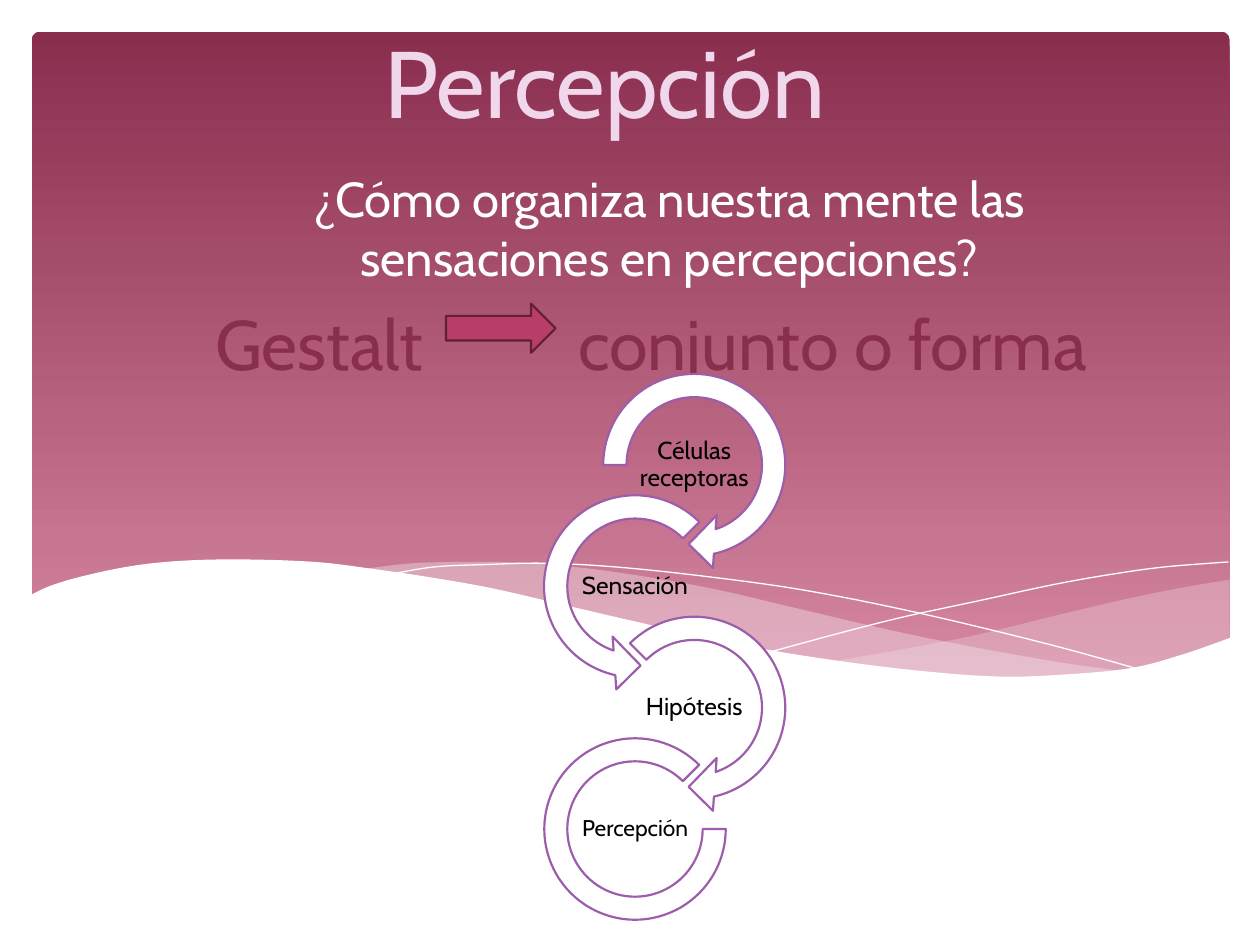
from lxml.etree import SubElement
from pptx import Presentation
from pptx.dml.color import RGBColor
from pptx.enum.shapes import MSO_SHAPE as Shape
from pptx.enum.text import MSO_ANCHOR as Anchor, PP_ALIGN as Align
from pptx.oxml.ns import qn
from pptx.util import Inches, Pt

FONT = "Cabin"
COLORS = {
    "wine": "8A2E4E", "rose": "D788A3", "mist": "F4E7ED", "white": "FFFFFF",
    "black": "000000", "lilac": "F1D7EC", "arrow": "B83D68",
    "arrow_edge": "602036", "purple": "9C5DAA",
}

TITLE = "Percepción"
QUESTION = "¿Cómo organiza nuestra mente las sensaciones en percepciones?"
GESTALT = "Gestalt\tconjunto o forma"

# Label, text size, preset, diameter, adjustments
STEPS = [
    ("Células receptoras", 14, Shape.CIRCULAR_ARROW, 1.68, (0.11, 11.42, 45, 108, 0.125)),
    ("Sensación", 14, Shape.LEFT_CIRCULAR_ARROW, 1.68, (0.11, 11.42, 63, 189, 0.125)),
    ("Hipótesis", 14, Shape.CIRCULAR_ARROW, 1.68, (0.11, 11.42, 45, 135, 0.125)),
    ("Percepción", 13, Shape.BLOCK_ARC, 1.44, (0, 189, 0.127)),
]
STEP_X = (5.51, 5.04)
FIRST_Y, LAST_Y = 3.69, 6.58
LABEL_SIZE = (0.94, 0.47)

# Each wave is a list of edges; the points of an edge lie on a smooth curve.
RIGHT_WAVE = [
    [(9.76, 4.6), (9.35, 4.67), (8.91, 4.76), (8.32, 4.9), (7.79, 5.03),
     (7.29, 5.13), (6.61, 5.25)],
    [(6.61, 5.25), (7.05, 5.31), (7.57, 5.36), (8.14, 5.38), (8.63, 5.35),
     (9.05, 5.29), (9.42, 5.19), (9.76, 5.07)],
]
LEFT_WAVE = [
    [(8.93, 5.33), (8.37, 5.25), (7.75, 5.14), (7.06, 5), (6.29, 4.82),
     (5.69, 4.68), (5.14, 4.58), (4.65, 4.51), (4.2, 4.47), (3.8, 4.46),
     (3.28, 4.47), (2.86, 4.52)],
    [(2.86, 4.52), (3.42, 4.59), (4.04, 4.71), (4.49, 4.82), (5.3, 5.01),
     (6.01, 5.15), (6.65, 5.26), (7.22, 5.34), (7.73, 5.38), (8.18, 5.39),
     (8.57, 5.37), (8.93, 5.33)],
]
FALLING_LINE = [
    [(3.09, 4.56), (3.44, 4.5), (3.87, 4.48), (4.33, 4.47), (4.89, 4.5),
     (5.56, 4.57), (6.36, 4.68), (7.27, 4.86), (8.31, 5.11), (9.07, 5.32)],
]
RISING_LINE = [
    [(6.13, 5.17), (6.72, 5.01), (7.2, 4.89), (7.76, 4.77), (8.36, 4.64),
     (8.81, 4.56), (9.24, 4.5), (9.75, 4.46)],
]
FRONT_WAVE = [
    [(9.77, 5.06), (9.4, 5.19), (8.99, 5.3), (8.5, 5.35), (7.93, 5.37),
     (7.26, 5.32), (6.48, 5.22), (5.79, 5.1), (5.03, 4.93), (4.47, 4.8),
     (3.91, 4.67), (3.4, 4.58), (2.92, 4.51), (2.5, 4.46), (1.93, 4.44),
     (1.46, 4.45), (1.06, 4.49), (0.67, 4.57), (0.4, 4.65), (0.23, 4.73)],
    [(0.23, 5.89), (9.77, 5.89)],
]


def rgb(name):
    return RGBColor.from_string(COLORS[name])


def smooth(knots, steps=6):
    """Points of a Catmull-Rom curve through the knots."""
    padded = [knots[0], *knots, knots[-1]]
    points = [knots[0]]
    for a, b, c, d in zip(padded, padded[1:], padded[2:], padded[3:]):
        for step in range(1, steps + 1):
            t = step / steps
            points.append(tuple(
                q + t / 2 * (r - p + t * (2 * p - 5 * q + 4 * r - s
                                          + t * (3 * q - p - 3 * r + s)))
                for p, q, r, s in zip(a, b, c, d)))
    return points


def paint(shape, fill=None, line=None, width=1.25, alpha=None):
    shape.shadow.inherit = False
    if fill:
        shape.fill.solid()
        shape.fill.fore_color.rgb = rgb(fill)
        if alpha:
            color = shape.fill._xPr.find(".//" + qn("a:srgbClr"))
            SubElement(color, qn("a:alpha"), val=str(alpha * 1000))
    else:
        shape.fill.background()
    if line:
        shape.line.color.rgb = rgb(line)
        shape.line.width = Pt(width)
    else:
        shape.line.fill.background()


def add_curve(shapes, edges, close=True, **style):
    points = [(Inches(x), Inches(y)) for edge in edges for x, y in smooth(edge)]
    builder = shapes.build_freeform(*points[0])
    builder.add_line_segments(points[1:], close=close)
    paint(builder.convert_to_shape(), **style)


def add_text(shapes, box, lines, inset=None, anchor=Anchor.TOP):
    """Lines are (text, size, colour, alignment); returns the paragraphs."""
    frame = shapes.add_textbox(*map(Inches, box)).text_frame
    frame.word_wrap = True
    frame.vertical_anchor = anchor
    if inset is not None:
        frame.margin_left = frame.margin_right = Inches(inset)
        frame.margin_top = frame.margin_bottom = Inches(inset)
    frame.text = "\n".join(line[0] for line in lines)
    for paragraph, (_, size, color, alignment) in zip(frame.paragraphs, lines):
        paragraph.alignment = alignment
        for run in paragraph.runs:
            run.font.name = FONT
            run.font.size = Pt(size)
            run.font.color.rgb = rgb(color)
    return frame.paragraphs


def add_background(shapes):
    panel = shapes.add_shape(Shape.ROUNDED_RECTANGLE,
                             *map(Inches, (0.25, 0.25, 9.51, 5.18)))
    panel.adjustments[0] = 0.013
    paint(panel)
    panel.fill.gradient()
    panel.fill.gradient_angle = 270
    for stop, color in zip(panel.fill.gradient_stops, ("wine", "rose")):
        stop.color.rgb = rgb(color)
    add_curve(shapes, RIGHT_WAVE, fill="mist", alpha=29)
    add_curve(shapes, LEFT_WAVE, fill="mist", alpha=40)
    for line in (FALLING_LINE, RISING_LINE):
        add_curve(shapes, line, close=False, line="white", width=0)
    add_curve(shapes, FRONT_WAVE, fill="white")


def add_headings(shapes):
    add_text(shapes, (0.55, 0.14, 8.5, 1.1), [(TITLE, 54, "lilac", Align.CENTER)])
    _, gestalt = add_text(shapes, (1.61, 1.29, 7.4, 1.85), [
        (QUESTION, 28, "white", Align.CENTER),
        (GESTALT, 40, "wine", Align.LEFT),
    ])
    gestalt.space_before = Pt(8)
    tabs = SubElement(gestalt._p.get_or_add_pPr(), qn("a:tabLst"))
    SubElement(tabs, qn("a:tab"), pos=str(Inches(2.88)), algn="l")

    arrow = shapes.add_shape(Shape.RIGHT_ARROW, *map(Inches, (3.54, 2.41, 0.87, 0.39)))
    paint(arrow, fill="arrow", line="arrow_edge")


def add_steps(shapes):
    pitch = (LAST_Y - FIRST_Y) / (len(STEPS) - 1)
    label_width, label_height = LABEL_SIZE
    for index, (label, size, preset, diameter, adjustments) in enumerate(STEPS):
        x, y = STEP_X[index % 2], FIRST_Y + index * pitch
        ring = shapes.add_shape(preset, Inches(x - diameter / 2), Inches(y - diameter / 2),
                                Inches(diameter), Inches(diameter))
        for position, value in enumerate(adjustments):
            ring.adjustments[position] = value
        paint(ring, fill="white", line="purple")
        box = (x - label_width / 2, y - label_height / 2, label_width, label_height)
        [paragraph] = add_text(shapes, box, [(label, size, "black", Align.CENTER)],
                               inset=0.01, anchor=Anchor.MIDDLE)
        paragraph.line_spacing = 0.9


def main():
    presentation = Presentation()
    presentation.slide_width, presentation.slide_height = Inches(10), Inches(7.5)
    slide = presentation.slides.add_slide(presentation.slide_layouts[6])
    add_background(slide.shapes)
    add_headings(slide.shapes)
    add_steps(slide.shapes.add_group_shape().shapes)
    presentation.save("out.pptx")


if __name__ == "__main__":
    main()
